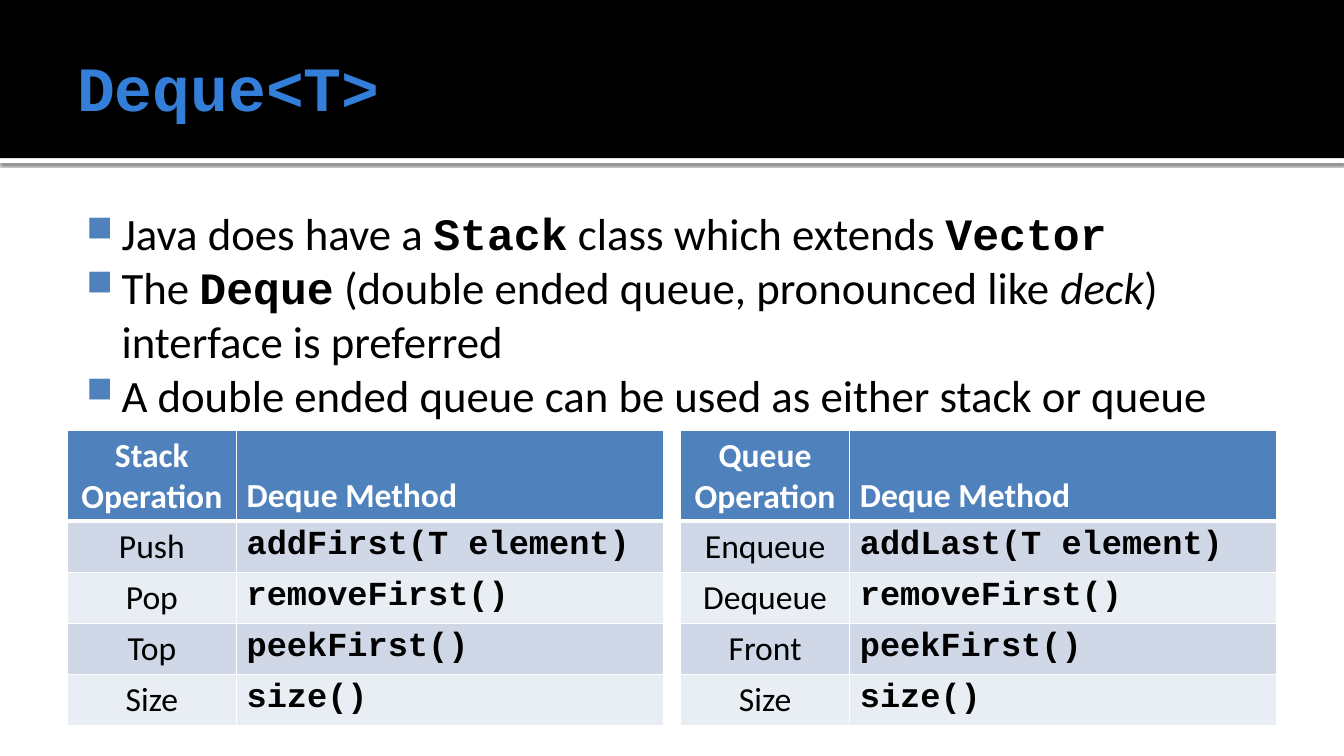
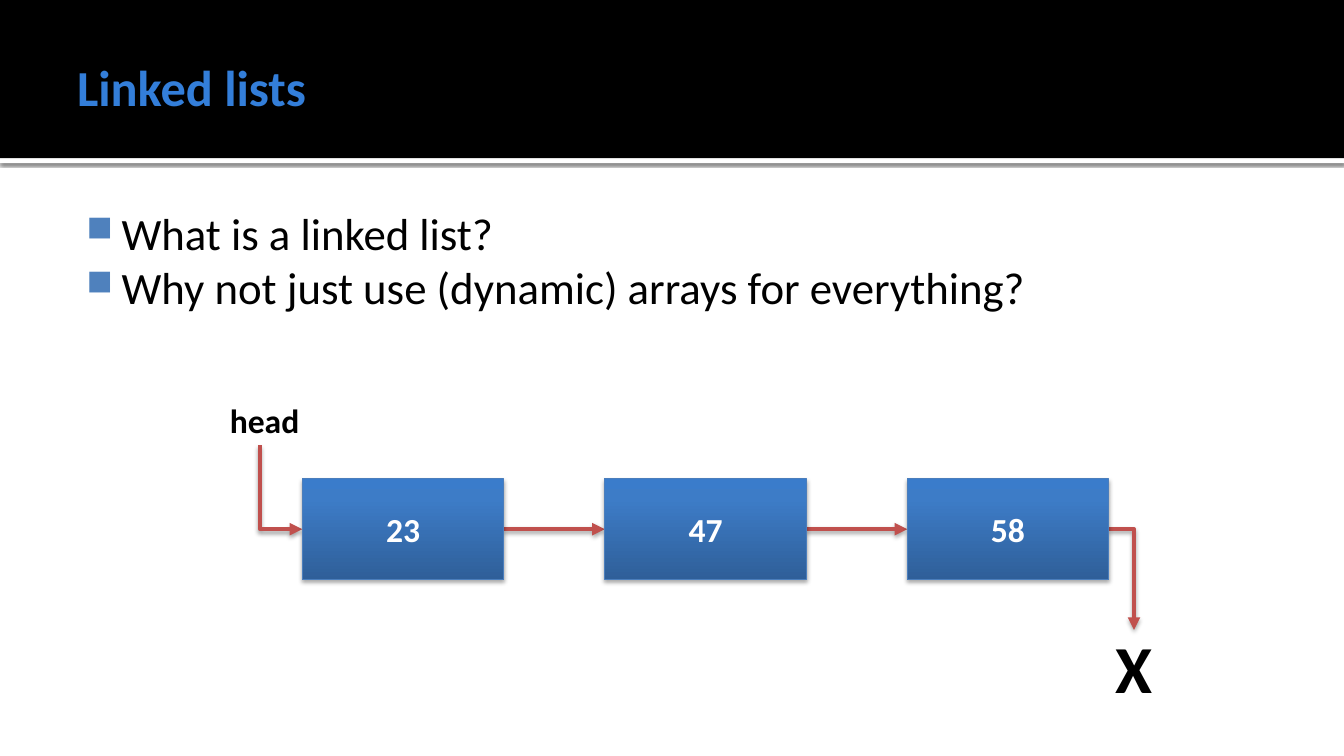
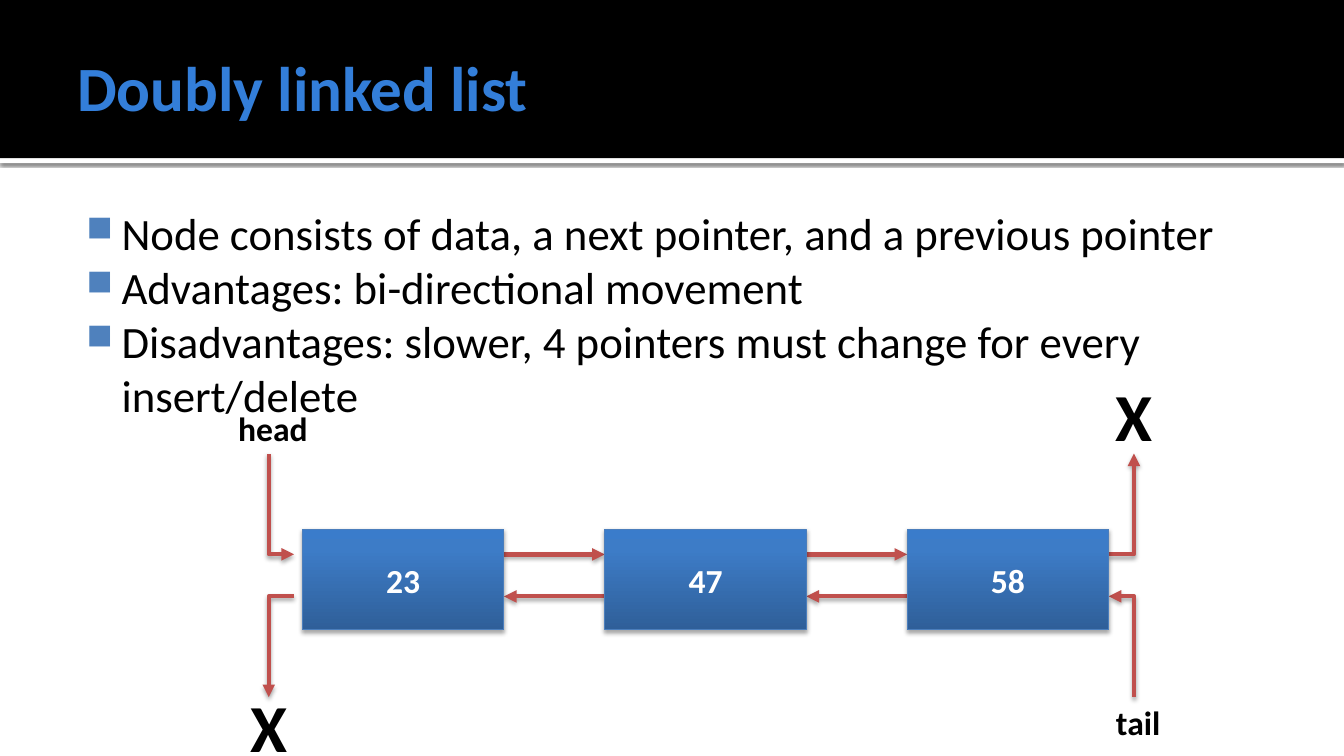
from copy import deepcopy

from lxml import etree
from pptx import Presentation
from pptx.dml.color import RGBColor
from pptx.enum import shapes, text
from pptx.oxml import ns
from pptx.util import Pt

COLORS = {
    "black": "000000", "white": "FFFFFF", "title": "337ED9", "accent": "4F81BD",
    "odd": "D0D8E8", "even": "E9EDF4", "arrow": "C0504D", "edge": "4B7EBC",
}
RGB = {name: RGBColor.from_string(value) for name, value in COLORS.items()}
NODE_GRADIENT = [(0, "2F5F99"), (0.8, "3D7CC7"), (1, "3A7CCB")]
SANS, MONO = "Calibri", "Courier New"
SOFT_SHADOW = {"alpha": 35, "blur": 3.15, "distance": 1.81}
BAND_SHADOW = {"alpha": 60, "blur": 2.5, "distance": 0.8}
NODE_LEFTS = [216, 432, 648]
NODE_WIDTH, NODE_HEIGHT = 144, 72
GAPS = [(left + NODE_WIDTH, following) for left, following in zip(NODE_LEFTS, NODE_LEFTS[1:])]


def write(frame, paragraphs, size=24, color="black", font=SANS, bold=False,
          align=text.PP_ALIGN.LEFT, anchor=None, margins=None, bullets=False):
    frame.word_wrap = True
    if anchor is not None:
        frame.vertical_anchor = anchor
    if margins:
        frame.margin_left, frame.margin_top, frame.margin_right, frame.margin_bottom = map(Pt, margins)
    for index, pieces in enumerate(paragraphs):
        paragraph = frame.add_paragraph() if index else frame.paragraphs[0]
        paragraph.alignment = align
        if bullets:
            props = paragraph._p.get_or_add_pPr()
            props.set("marL", str(Pt(34.56)))
            props.set("indent", str(Pt(-25.2)))
            tint = etree.SubElement(props, ns.qn("a:buClr"))
            etree.SubElement(tint, ns.qn("a:srgbClr"), val=COLORS["accent"])
            etree.SubElement(props, ns.qn("a:buSzPct"), val="80000")
            etree.SubElement(props, ns.qn("a:buChar"), char="■")
        for piece in [pieces] if isinstance(pieces, str) else pieces:
            words, style = (piece, "") if isinstance(piece, str) else piece
            run = paragraph.add_run()
            run.text = words
            run.font.size = Pt(size)
            run.font.name = MONO if style == "code" else font
            run.font.bold = bold or style == "code"
            run.font.italic = style == "italic"
            run.font.color.rgb = RGB[color]


def cast_shadow(item, alpha, blur, distance):
    props = item._element.spPr
    effects = props.find(ns.qn("a:effectLst"))
    if effects is None:
        effects = etree.SubElement(props, ns.qn("a:effectLst"))
    shadow = etree.SubElement(effects, ns.qn("a:outerShdw"), blurRad=str(Pt(blur)),
                              dist=str(Pt(distance)), dir="5400000", rotWithShape="0")
    tint = etree.SubElement(shadow, ns.qn("a:srgbClr"), val=COLORS["black"])
    etree.SubElement(tint, ns.qn("a:alpha"), val=str(alpha * 1000))


topics = [
    {
        "title": "Deque<T>", "title_font": MONO, "title_size": 45,
        "points": [
            ["Java does have a ", ("Stack", "code"), " class which extends ", ("Vector", "code")],
            ["The ", ("Deque", "code"), " (double ended queue, pronounced like ",
             ("deck", "italic"), ") interface is preferred"],
            "A double ended queue can be used as either stack or queue",
        ],
        "tables": [
            (48, [("Stack Operation", "Deque Method"), ("Push", "addFirst(T element)"),
                  ("Pop", "removeFirst()"), ("Top", "peekFirst()"), ("Size", "size()")]),
            (486, [("Queue Operation", "Deque Method"), ("Enqueue", "addLast(T element)"),
                   ("Dequeue", "removeFirst()"), ("Front", "peekFirst()"), ("Size", "size()")]),
        ],
    },
    {
        "title": "Linked lists", "title_size": 36,
        "points": ["What is a linked list?", "Why not just use (dynamic) arrays for everything?"],
        "node_top": 342,
        "links": [(start, 378, end, 378, "tailEnd") for start, end in GAPS] + [
            (792, 378, 810, 450, "tailEnd"), (216, 378, 186, 318, "headEnd")],
        "labels": [("X", 48, 780, 444, 60), ("head", 24, 138, 282, 102)],
    },
    {
        "title": "Doubly linked list", "title_size": 45,
        "points": [
            "Node consists of data, a next pointer, and a previous pointer",
            "Advantages: bi-directional movement",
            "Disadvantages: slower, 4 pointers must change for every insert/delete",
        ],
        "node_top": 378,
        "links": [(start, 396, end, 396, "tailEnd") for start, end in GAPS]
        + [(end, 426, start, 426, "tailEnd") for start, end in GAPS] + [
            (792, 396, 810, 324, "tailEnd"), (210, 426, 192, 498, "tailEnd"),
            (210, 396, 192, 324, "headEnd"), (792, 426, 810, 498, "headEnd")],
        "labels": [("X", 48, 780, 264, 60), ("head", 24, 144, 288, 102),
                   ("X", 48, 162, 486, 60), ("tail", 24, 762, 497.5, 102)],
    },
]

deck = Presentation()
deck.slide_width, deck.slide_height = Pt(960), Pt(540)

for topic in topics:
    slide = deck.slides.add_slide(deck.slide_layouts[6])

    for color, top, height in [("white", 113, 3.6), ("black", 0, 113)]:
        band = slide.shapes.add_shape(shapes.MSO_SHAPE.RECTANGLE, 0, Pt(top), Pt(960), Pt(height))
        band.shadow.inherit = False
        band.fill.solid()
        band.fill.fore_color.rgb = RGB[color]
        band.line.fill.background()
        if color == "white":
            cast_shadow(band, **BAND_SHADOW)

    heading = slide.shapes.add_textbox(Pt(48), Pt(12), Pt(864), Pt(99))
    write(heading.text_frame, [topic["title"]], size=topic["title_size"], color="title",
          font=topic.get("title_font", SANS), bold=True,
          anchor=text.MSO_ANCHOR.MIDDLE, margins=(7.2, 3.6, 3.6, 3.6))
    body = slide.shapes.add_textbox(Pt(48), Pt(140), Pt(864), Pt(168))
    write(body.text_frame, topic["points"], size=32, bullets=True, margins=(4.32, 7.2, 7.2, 3.6))

    for left, rows in topic.get("tables", []):
        table = slide.shapes.add_table(5, 2, Pt(left), Pt(307.5), Pt(426), Pt(209)).table
        table.columns[0].width, table.columns[1].width = Pt(121), Pt(305)
        for r, row in enumerate(rows):
            table.rows[r].height = Pt(36.5 if r else 63)
            for c, words in enumerate(row):
                cell = table.cell(r, c)
                cell.fill.solid()
                cell.fill.fore_color.rgb = RGB["accent" if r == 0 else "odd" if r % 2 else "even"]
                if r == 0 and c == 1:
                    cell.vertical_anchor = text.MSO_ANCHOR.BOTTOM
                write(cell.text_frame, [words], color="black" if r else "white",
                      font=MONO if r and c else SANS, bold=r == 0 or c == 1,
                      align=text.PP_ALIGN.LEFT if c else text.PP_ALIGN.CENTER)
                for order, side in enumerate(["lnL", "lnR", "lnT", "lnB"]):
                    header_rule = (r, side) in [(0, "lnB"), (1, "lnT")]
                    border = etree.Element(ns.qn("a:" + side), w=str(Pt(3 if header_rule else 1)))
                    paint = etree.SubElement(border, ns.qn("a:solidFill"))
                    etree.SubElement(paint, ns.qn("a:srgbClr"), val=COLORS["white"])
                    cell._tc.get_or_add_tcPr().insert(order, border)

    for x1, y1, x2, y2, arrow_end in topic.get("links", []):
        straight = y1 == y2
        kind = shapes.MSO_CONNECTOR.STRAIGHT if straight else shapes.MSO_CONNECTOR.ELBOW
        link = slide.shapes.add_connector(kind, Pt(x1), Pt(y1), Pt(x2), Pt(y2))
        link.line.color.rgb = RGB["arrow"]
        link.line.width = Pt(3)
        props = link._element.spPr
        if not straight:
            props.find(ns.qn("a:prstGeom")).set("prst", "bentConnector2")
        etree.SubElement(props.find(ns.qn("a:ln")), ns.qn("a:" + arrow_end), type="triangle")
        cast_shadow(link, **SOFT_SHADOW)

    for words, size, left, top, width in topic.get("labels", []):
        label = slide.shapes.add_textbox(Pt(left), Pt(top), Pt(width), Pt(size * 1.22 + 7.2))
        write(label.text_frame, [words], size=size, bold=True, align=text.PP_ALIGN.CENTER)

    if "node_top" in topic:
        for left, value in zip(NODE_LEFTS, ["23", "47", "58"]):
            node = slide.shapes.add_shape(shapes.MSO_SHAPE.RECTANGLE, Pt(left), Pt(topic["node_top"]),
                                          Pt(NODE_WIDTH), Pt(NODE_HEIGHT))
            node.shadow.inherit = False
            node.fill.gradient()
            node.fill.gradient_angle = 90
            stops = node._element.spPr.find(ns.qn("a:gradFill")).find(ns.qn("a:gsLst"))
            stops.append(deepcopy(stops[0]))
            for stop, (position, color) in zip(node.fill.gradient_stops, NODE_GRADIENT):
                stop.position = position
                stop.color.rgb = RGBColor.from_string(color)
            node.line.color.rgb = RGB["edge"]
            node.line.width = Pt(0.75)
            cast_shadow(node, **SOFT_SHADOW)
            write(node.text_frame, [value], color="white", bold=True,
                  align=text.PP_ALIGN.CENTER, anchor=text.MSO_ANCHOR.MIDDLE)

deck.save("out.pptx")
